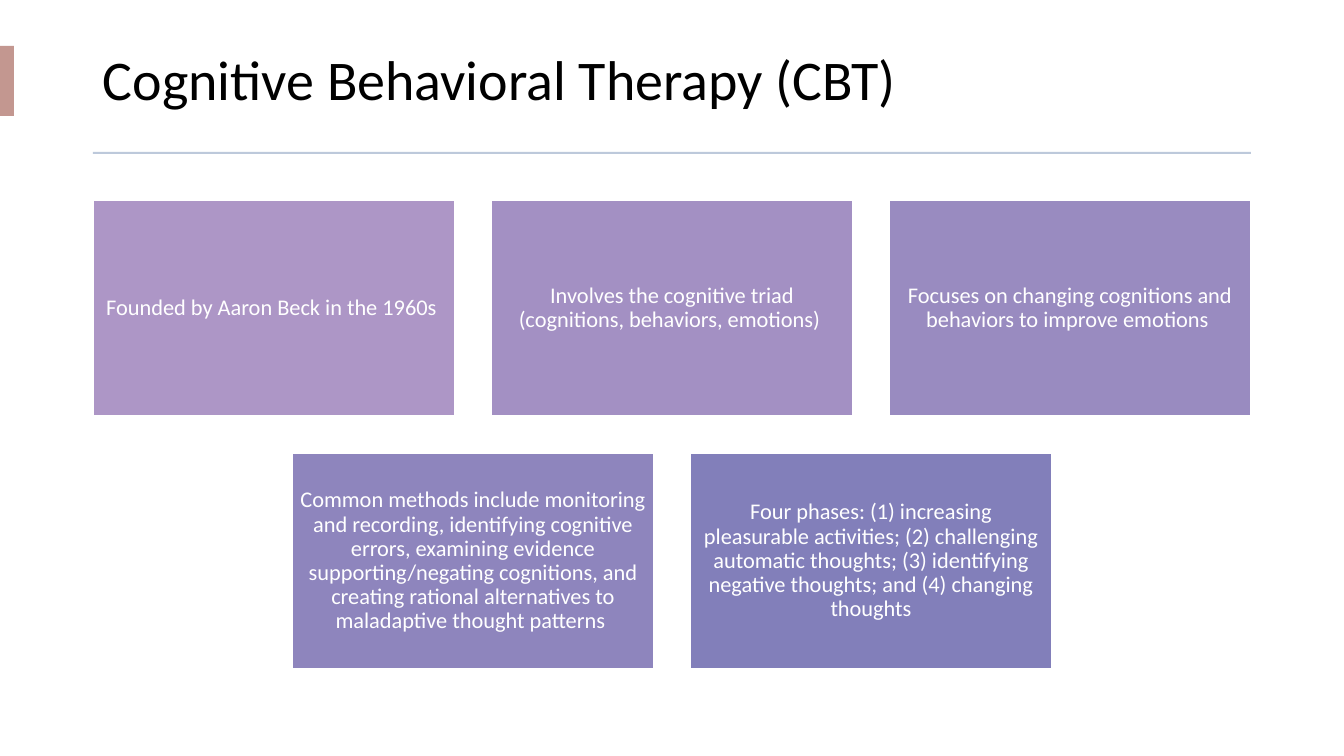
from pptx import Presentation
from pptx.dml.color import RGBColor
from pptx.enum.shapes import MSO_SHAPE
from pptx.enum.text import MSO_ANCHOR, PP_ALIGN
from pptx.util import Pt

RECT = MSO_SHAPE.RECTANGLE
MIDDLE = MSO_ANCHOR.MIDDLE
LEFT, CENTER = PP_ALIGN.LEFT, PP_ALIGN.CENTER

BLACK = RGBColor(0x00, 0x00, 0x00)
WHITE = RGBColor(0xFF, 0xFF, 0xFF)
ROSE = RGBColor(0xC3, 0x97, 0x90)
MIST = RGBColor(0xBD, 0xC9, 0xDB)
LILAC = RGBColor(0xAD, 0x96, 0xC6)
MAUVE = RGBColor(0xA3, 0x90, 0xC3)
VIOLET = RGBColor(0x99, 0x8B, 0xC0)
PURPLE = RGBColor(0x8E, 0x85, 0xBD)
INDIGO = RGBColor(0x82, 0x7F, 0xBA)

FONT = "Calibri"
SCALE = 914400 / 100.8
GAP = 37
CARD_W, CARD_H = 361, 216

ROWS = [
    [
        ("Founded by Aaron Beck in the 1960s ", LILAC),
        ("Involves the cognitive triad (cognitions, behaviors, emotions) ", MAUVE),
        ("Focuses on changing cognitions and behaviors to improve emotions ", VIOLET),
    ],
    [
        ("Common methods include monitoring and recording, identifying cognitive "
         "errors, examining evidence supporting/negating cognitions, and creating "
         "rational alternatives to maladaptive thought patterns ", PURPLE),
        ("Four phases: (1) increasing pleasurable activities; (2) challenging "
         "automatic thoughts; (3) identifying negative thoughts; and (4) changing "
         "thoughts", INDIGO),
    ],
]


def px(*sizes):
    """Turn pixel lengths into EMU."""
    return [round(size * SCALE) for size in sizes]


def write(shape, text, size, color, align=LEFT, pad=(10, 5)):
    """Set one formatted paragraph in a shape."""
    frame = shape.text_frame
    frame.word_wrap = True
    frame.vertical_anchor = MIDDLE
    frame.margin_left = frame.margin_right = px(pad[0])[0]
    frame.margin_top = frame.margin_bottom = px(pad[1])[0]
    para = frame.paragraphs[0]
    para.alignment = align
    para.line_spacing = 0.9
    run = para.add_run()
    run.text = text
    run.font.name = FONT
    run.font.size = Pt(size)
    run.font.color.rgb = color


def block(slide, box, fill, line=None):
    """Add a flat rectangle, outlined if a line colour is given."""
    shape = slide.shapes.add_shape(RECT, *px(*box))
    shape.shadow.inherit = False
    shape.fill.solid()
    shape.fill.fore_color.rgb = fill
    if line is None:
        shape.line.fill.background()
    else:
        shape.line.color.rgb = line
        shape.line.width = Pt(1)
    return shape


def header(slide, box):
    """Place the title, the edge accent and the rule below."""
    left, top, width, height = box
    title = slide.shapes.add_textbox(*px(left, top, width, height))
    write(title, "Cognitive Behavioral Therapy (CBT)", 40, BLACK)
    block(slide, (0, top + 19, 14, 70), ROSE)
    block(slide, (left, top + height + 14, width, 2), MIST)


def cards(slide, box):
    """Place centred rows of cards within the box."""
    left, top, width, _ = box
    for r, row in enumerate(ROWS):
        span = len(row) * (CARD_W + GAP) - GAP
        start = left + (width - span) / 2
        for c, (text, fill) in enumerate(row):
            spot = (start + c * (CARD_W + GAP), top + r * (CARD_H + GAP))
            card = block(slide, (*spot, CARD_W, CARD_H), fill, WHITE)
            write(card, text, 16, WHITE, align=CENTER, pad=(7, 7))


def main():
    """Build and save the slide."""
    deck = Presentation()
    deck.slide_width, deck.slide_height = px(1344, 756)
    slide = deck.slides.add_slide(deck.slide_layouts[6])
    header(slide, (93, 27, 1158, 111))
    cards(slide, (93, 200, 1158, 469))
    deck.save("out.pptx")


if __name__ == "__main__":
    main()
